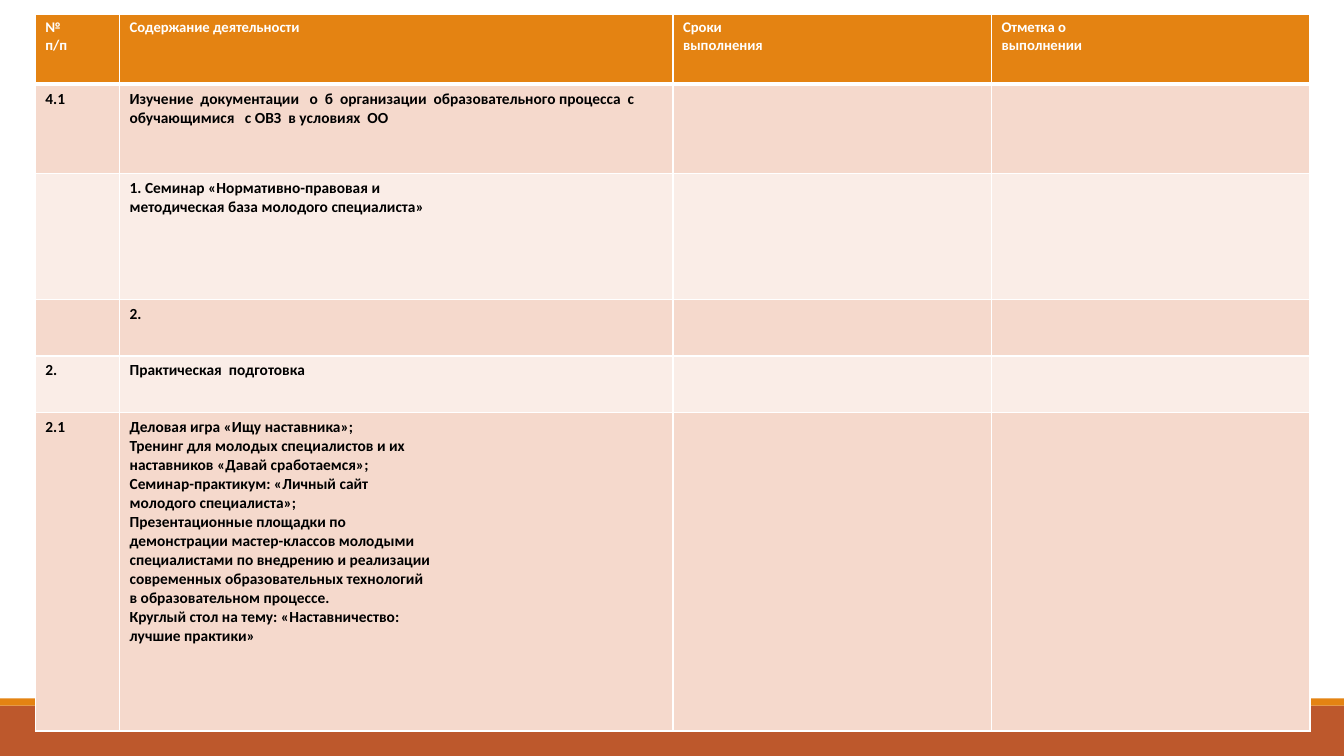
from lxml import etree
from pptx import Presentation
from pptx.dml.color import RGBColor
from pptx.enum import shapes
from pptx.oxml import ns
from pptx.util import Pt

WHITE = RGBColor(0xFF, 0xFF, 0xFF)
BLACK = RGBColor(0, 0, 0)
ORANGE = RGBColor(0xE4, 0x83, 0x12)
RUST = RGBColor(0xBD, 0x58, 0x2C)
ROW_DARK = RGBColor(0xF5, 0xD9, 0xCC)
ROW_LIGHT = RGBColor(0xFA, 0xED, 0xE7)

COL_WIDTHS = [60.2, 395.4, 227.5, 227.5]
ROW_HEIGHTS = [50.2, 63.6, 90, 40.5, 40.5, 227.5]
PLAN = [
    ["№\nп/п", "Содержание деятельности", "Сроки\nвыполнения", "Отметка о\nвыполнении"],
    ["4.1", "Изучение  документации   о  б  организации  образовательного процесса  с "
            "обучающимися   с ОВЗ  в условиях  ОО", "", ""],
    ["", "1. Семинар «Нормативно-правовая и\nметодическая база молодого специалиста»", "", ""],
    ["", "2.", "", ""],
    ["2.", "Практическая  подготовка", "", ""],
    ["2.1", "Деловая игра «Ищу наставника»;\n"
            "Тренинг для молодых специалистов и их\n"
            "наставников «Давай сработаемся»;\n"
            "Семинар-практикум: «Личный сайт\n"
            "молодого специалиста»;\n"
            "Презентационные площадки по\n"
            "демонстрации мастер-классов молодыми\n"
            "специалистами по внедрению и реализации\n"
            "современных образовательных технологий\n"
            "в образовательном процессе.\n"
            "Круглый стол на тему: «Наставничество:\n"
            "лучшие практики»", "", ""],
]


def add_band(slide, top, height, color):
    """Draw a full-width footer band."""
    sp = slide.shapes.add_shape(shapes.MSO_SHAPE.RECTANGLE, Pt(0), Pt(top), Pt(960), Pt(height))
    sp.shadow.inherit = False
    sp.fill.solid()
    sp.fill.fore_color.rgb = color
    sp.line.fill.background()


def write_text(tf, content, size=11, color=BLACK, bold=True, font="Calibri"):
    """Write one formatted paragraph per line of content."""
    for i, line in enumerate(content.split("\n")):
        p = tf.paragraphs[0] if i == 0 else tf.add_paragraph()
        p.font.size = Pt(size)
        if line:
            r = p.add_run()
            r.text = line
            r.font.name = font
            r.font.size = Pt(size)
            r.font.bold = bold
            r.font.color.rgb = color


def set_borders(cell, top=1, bottom=1):
    """Give a cell white borders with the given widths in points."""
    tc_pr = cell._tc.get_or_add_tcPr()
    for side, width in (("L", 1), ("R", 1), ("T", top), ("B", bottom)):
        ln = etree.SubElement(tc_pr, ns.qn(f"a:ln{side}"), w=str(Pt(width)))
        fill = etree.SubElement(ln, ns.qn("a:solidFill"))
        etree.SubElement(fill, ns.qn("a:srgbClr"), val=str(WHITE))


def add_plan_table(slide, left, top):
    """Add the activity plan with a header and alternating row colours."""
    frame = slide.shapes.add_table(len(PLAN), len(COL_WIDTHS), Pt(left), Pt(top),
                                   Pt(sum(COL_WIDTHS)), Pt(sum(ROW_HEIGHTS)))
    table = frame.table
    for col, width in zip(table.columns, COL_WIDTHS):
        col.width = Pt(width)
    for i, (row, height) in enumerate(zip(table.rows, ROW_HEIGHTS)):
        row.height = Pt(height)
        header = i == 0
        fill = ORANGE if header else ROW_DARK if i % 2 else ROW_LIGHT
        for cell, content in zip(row.cells, PLAN[i]):
            set_borders(cell, top=3 if i == 1 else 1, bottom=3 if header else 1)
            cell.fill.solid()
            cell.fill.fore_color.rgb = fill
            write_text(cell.text_frame, content, size=10.5 if header else 11,
                       color=WHITE if header else BLACK)


def main():
    """Build and save the slide."""
    prs = Presentation()
    prs.slide_width, prs.slide_height = Pt(960), Pt(540)
    slide = prs.slides.add_slide(prs.slide_layouts[6])
    add_band(slide, 504, 36, RUST)
    add_band(slide, 498.75, 5.25, ORANGE)
    add_plan_table(slide, 25.2, 10)
    prs.save("out.pptx")


if __name__ == "__main__":
    main()
